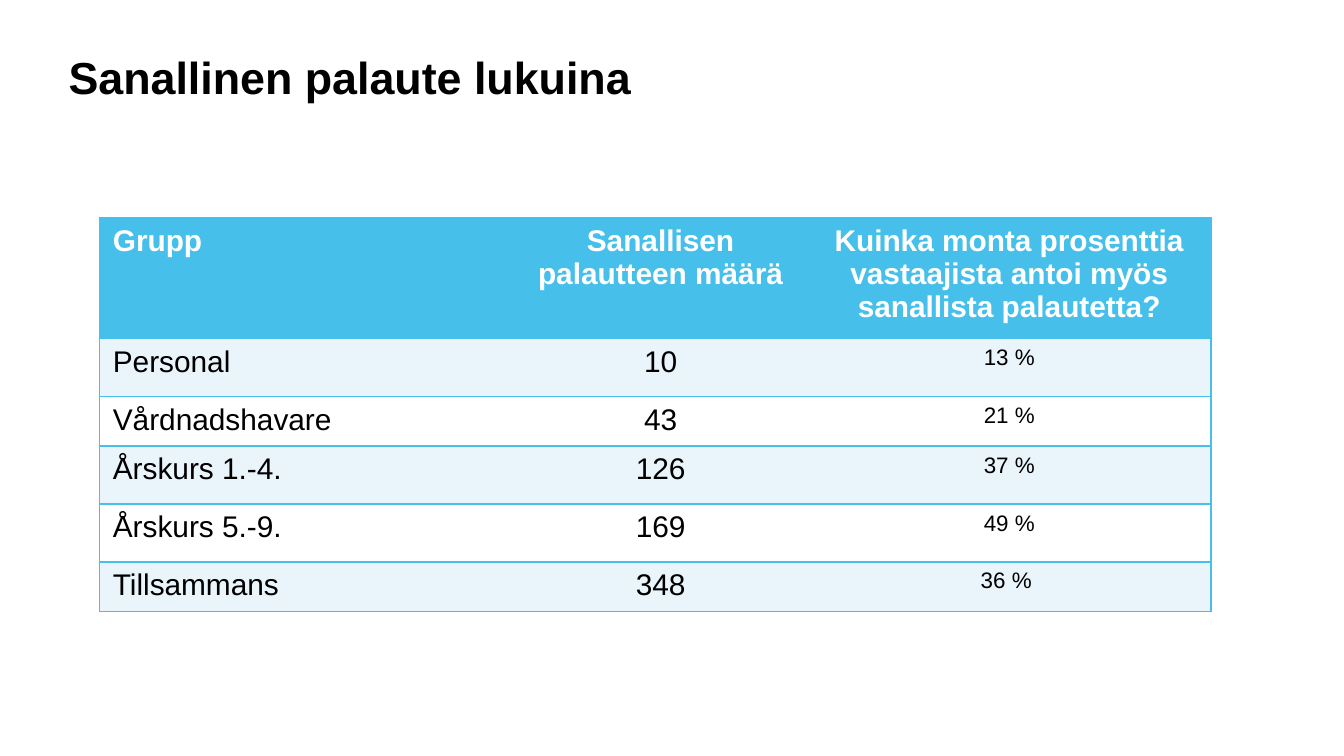
import pptx
import pptx.dml.color
import pptx.enum.text
import pptx.oxml.ns
import pptx.util
from lxml import etree

Inches, Pt = pptx.util.Inches, pptx.util.Pt
ALIGN = pptx.enum.text.PP_ALIGN

TITLE = "Sanallinen palaute lukuina"
HEADER = (
    "Grupp",
    "Sanallisen palautteen määrä",
    "Kuinka monta prosenttia vastaajista antoi myös sanallista palautetta?",
)
FEEDBACK = [
    ("Personal", "10", "13 %"),
    ("Vårdnadshavare", "43", "21 %"),
    ("Årskurs 1.-4.", "126", "37 %"),
    ("Årskurs 5.-9.", "169", "49 %"),
    ("Tillsammans", "348", "36 % "),
]
COLORS = {"accent": "46BFEA", "band": "E9F4FB", "white": "FFFFFF", "text": "000000"}
FONT = "Arial"
SLIDE_WIDTH = Inches(10)
SLIDE_HEIGHT = SLIDE_WIDTH * 9 // 16
COLUMN_WIDTHS = (3.08, 2.19, 3)
HEADER_HEIGHT, TALL, LOW = 0.9, 0.43, 0.37
ROW_HEIGHTS = (HEADER_HEIGHT, TALL, LOW, TALL, TALL, LOW)
BODY_SIZES = (16, 16, 12)


def rgb(name):
    return pptx.dml.color.RGBColor.from_string(COLORS[name])


def style_font(font, size, color, bold):
    font.name, font.size, font.bold = FONT, Pt(size), bold
    font.color.rgb = rgb(color)


def set_borders(cell, visible):
    """Draw accent lines on the visible sides (letters of LRTB), none elsewhere."""
    properties = cell._tc.get_or_add_tcPr()
    qn = pptx.oxml.ns.qn
    for position, side in enumerate("LRTB"):
        line = etree.Element(qn(f"a:ln{side}"), w=str(Pt(1)))
        if side in visible:
            fill = etree.SubElement(line, qn("a:solidFill"))
            etree.SubElement(fill, qn("a:srgbClr"), val=COLORS["accent"])
        else:
            etree.SubElement(line, qn("a:noFill"))
        properties.insert(position, line)


def add_title(slide):
    title = slide.shapes.title
    title.left, title.top, title.width, title.height = map(Inches, (0.51, 0.15, 8.95, 0.78))
    frame = title.text_frame
    frame.text = TITLE
    frame.word_wrap = True
    frame.vertical_anchor = pptx.enum.text.MSO_ANCHOR.MIDDLE
    frame.margin_left = frame.margin_top = frame.margin_bottom = 0
    paragraph = frame.paragraphs[0]
    paragraph.alignment = ALIGN.LEFT
    paragraph.line_spacing = Pt(33)
    style_font(paragraph.font, 24, "text", True)


def add_feedback_table(slide):
    rows = [HEADER] + FEEDBACK
    table = slide.shapes.add_table(
        len(rows), len(HEADER), Inches(0.74), Inches(1.62),
        Inches(sum(COLUMN_WIDTHS)), Inches(sum(ROW_HEIGHTS)),
    ).table
    for column, width in zip(table.columns, COLUMN_WIDTHS):
        column.width = Inches(width)
    for row, height in zip(table.rows, ROW_HEIGHTS):
        row.height = Inches(height)

    last = len(HEADER) - 1
    for r, texts in enumerate(rows):
        is_header = r == 0
        fill = "accent" if is_header else ("band" if r % 2 else "white")
        for c, text in enumerate(texts):
            cell = table.cell(r, c)
            cell.text = text
            cell.fill.solid()
            cell.fill.fore_color.rgb = rgb(fill)
            set_borders(cell, "TB" + ("L" if c == 0 else "R" if c == last else ""))
            paragraph = cell.text_frame.paragraphs[0]
            paragraph.alignment = ALIGN.CENTER if c else ALIGN.LEFT
            style_font(paragraph.font, 16 if is_header else BODY_SIZES[c],
                       "white" if is_header else "text", is_header)


def main():
    presentation = pptx.Presentation()
    presentation.slide_width, presentation.slide_height = SLIDE_WIDTH, SLIDE_HEIGHT
    slide = presentation.slides.add_slide(presentation.slide_layouts.get_by_name("Title Only"))
    add_title(slide)
    add_feedback_table(slide)
    presentation.save("out.pptx")


if __name__ == "__main__":
    main()
